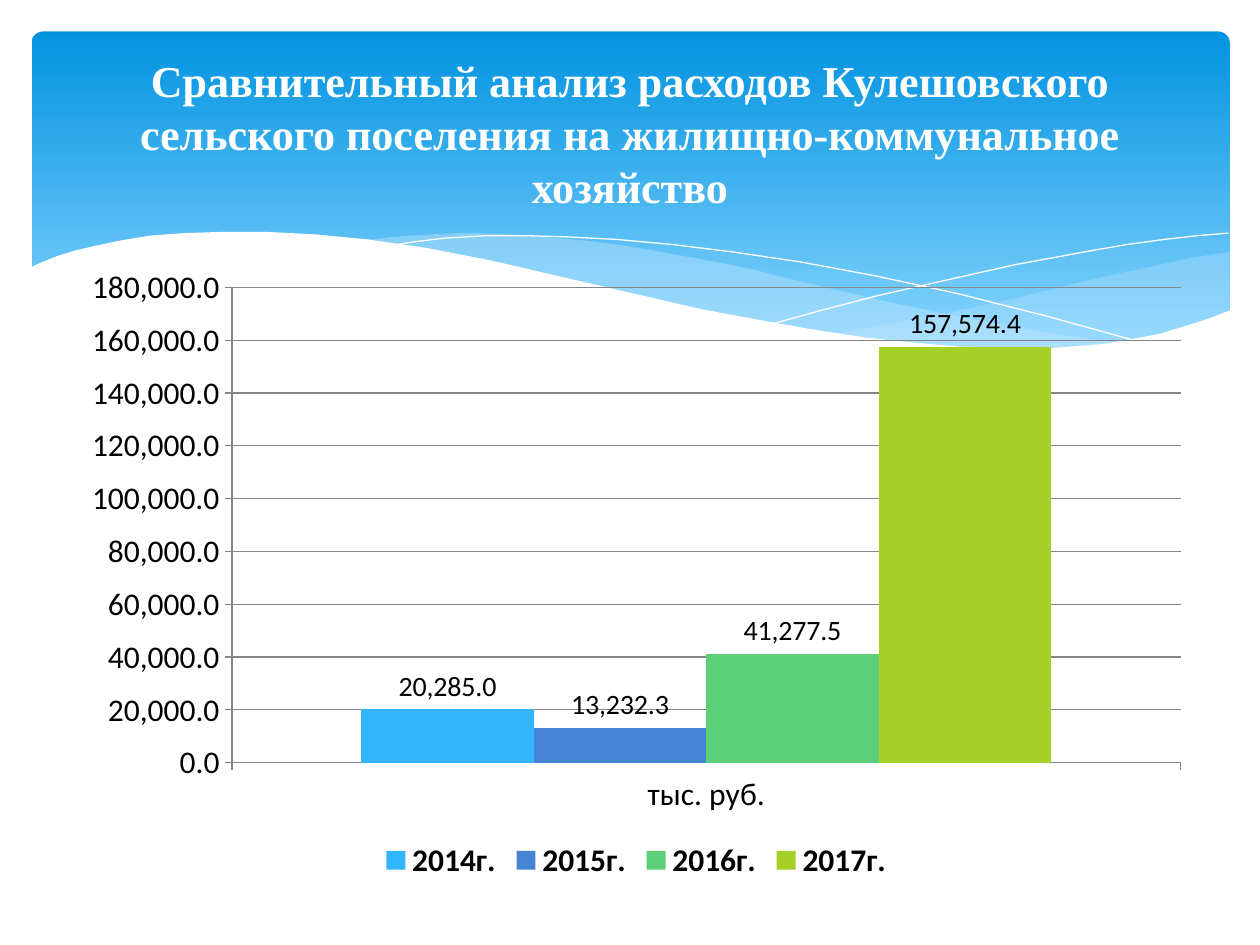
"""Build a slide with a wave banner, a title and a column chart of housing costs."""
from lxml.etree import SubElement
from pptx import Presentation
from pptx.chart.data import CategoryChartData as Data
from pptx.dml.color import RGBColor as RGB
from pptx.enum.chart import XL_CHART_TYPE as Kind, XL_LABEL_POSITION as Spot
from pptx.enum.chart import XL_LEGEND_POSITION as Side, XL_TICK_MARK as Tick
from pptx.enum.shapes import MSO_SHAPE as Form
from pptx.enum.text import MSO_ANCHOR as Anchor, PP_ALIGN as Align
from pptx.oxml.ns import qn
from pptx.util import Pt

SCALE = 9144
HUES = {"white": "FFFFFF", "black": "000000", "grid": "868686", "top": "0293E0",
        "low": "83D3FE", "mist": "C6E7FC", "sky": "31B6FD", "blue": "4584D3",
        "green": "5BD078", "lime": "A5D028"}
NUM = "#,##0.0"
TITLE = ("Сравнительный анализ расходов Кулешовского сельского поселения "
         "на жилищно-коммунальное хозяйство")
COSTS = [("2014г.", 20285, "sky"), ("2015г.", 13232.3, "blue"),
         ("2016г.", 41277.5, "green"), ("2017г.", 157574.4, "lime")]

RIGHT = [(976, 200), (948, 204), (921, 210), (861, 223), (805, 237), (753, 248),
         (706, 257), (661, 265), (691, 269), (719, 272), (745, 275), (781, 277),
         (814, 278), (844, 277), (872, 274), (897, 270), (921, 265), (942, 259),
         (963, 252), (976, 247)]
MIDDLE = [(893, 273), (837, 265), (775, 254), (706, 240), (629, 222), (598, 214),
          (569, 208), (541, 203), (514, 198), (489, 194), (465, 191), (442, 189),
          (420, 187), (399, 186), (380, 185), (361, 185), (344, 186), (328, 187),
          (313, 188), (286, 191), (323, 196), (362, 203), (404, 211), (449, 222),
          (491, 232), (530, 240), (584, 252), (634, 261), (680, 268), (722, 274),
          (761, 277), (796, 278), (828, 278), (857, 277), (876, 275)]
FALL = [(309, 195), (328, 192), (353, 189), (387, 187), (416, 187), (450, 188),
        (489, 190), (533, 194), (582, 200), (636, 208), (695, 219), (760, 233),
        (831, 251), (907, 272)]
RISE = [(613, 257), (653, 246), (695, 235), (748, 223), (806, 210), (866, 199),
        (895, 194), (924, 190), (951, 187), (975, 185)]
FRONT = [(977, 246), (959, 253), (940, 259), (920, 265), (899, 269), (875, 273),
         (850, 275), (823, 277), (793, 276), (761, 275), (726, 272), (688, 268),
         (648, 262), (603, 254), (555, 245), (503, 233), (447, 220), (391, 207),
         (340, 197), (292, 190), (250, 186), (211, 184), (177, 184), (146, 185),
         (119, 187), (95, 191), (76, 195), (59, 199), (46, 203), (36, 207),
         (29, 210), (23, 213), (23, 329), (977, 329)]


def px(num):
    return num * SCALE


def hue(name):
    return RGB.from_string(HUES[name])


def put(item, vals):
    for key, val in vals.items():
        setattr(item, key, val)


class Deck:
    """Hold the style and the current slide."""

    def __init__(self, wide, high):
        self.prs = Presentation()
        put(self.prs, {"slide_width": px(wide), "slide_height": px(high)})
        self.slide = self.prs.slides.add_slide(self.prs.slide_layouts[5])
        self.shapes = self.slide.shapes

    def font(self, font, size, color, **vals):
        put(font, {"size": Pt(size), **vals})
        font.color.rgb = hue(color)

    def panel(self, box, top, low):
        shape = self.shapes.add_shape(Form.ROUNDED_RECTANGLE, *map(px, box))
        shape.adjustments[0] = 0.034
        shape.shadow.inherit = False
        shape.line.fill.background()
        shape.fill.gradient()
        shape.fill.gradient_angle = 270
        for stop, color, pos in zip(shape.fill.gradient_stops, (top, low), (0, 0.9)):
            stop.color.rgb = hue(color)
            stop.position = pos

    def trace(self, dots, close):
        pen = self.shapes.build_freeform(*dots[0], scale=SCALE)
        pen.add_line_segments(dots[1:], close=close)
        shape = pen.convert_to_shape()
        shape.shadow.inherit = False
        return shape

    def wave(self, dots, color, alpha=100):
        shape = self.trace(dots, True)
        shape.line.fill.background()
        shape.fill.solid()
        shape.fill.fore_color.rgb = hue(color)
        if alpha < 100:
            tone = next(shape.element.iter(qn("a:srgbClr")))
            SubElement(tone, qn("a:alpha")).set("val", str(alpha * 1000))

    def curve(self, dots, color):
        shape = self.trace(dots, False)
        shape.fill.background()
        shape.line.color.rgb = hue(color)
        shape.line.width = 0

    def title(self, box, text, size, face):
        shape = self.shapes.title
        put(shape, dict(zip(("left", "top", "width", "height"), map(px, box))))
        frame = shape.text_frame
        put(frame, {"text": text, "word_wrap": True, "vertical_anchor": Anchor.MIDDLE})
        para = frame.paragraphs[0]
        para.alignment = Align.CENTER
        self.font(para.runs[0].font, size, "white", name=face, bold=True)
        shape.element.getparent().append(shape.element)

    def columns(self, box, cat, rows):
        data = Data(number_format=NUM)
        data.categories = [cat]
        for name, val, _ in rows:
            data.add_series(name, [val])
        chart = self.shapes.add_chart(Kind.COLUMN_CLUSTERED, *map(px, box), data).chart
        put(chart, {"has_title": False, "has_legend": True})
        self.font(chart.font, 18, "black", name="Calibri")
        put(chart.legend, {"position": Side.BOTTOM, "include_in_layout": False})
        self.font(chart.legend.font, 18, "black", name="Calibri", bold=True)
        plot = chart.plots[0]
        put(plot, {"gap_width": 150, "overlap": 0, "vary_by_categories": False})
        for axis in (chart.category_axis, chart.value_axis):
            put(axis, {"major_tick_mark": Tick.OUTSIDE, "minor_tick_mark": Tick.NONE})
            axis.format.line.color.rgb = hue("grid")
        axis = chart.value_axis
        axis.major_gridlines.format.line.color.rgb = hue("grid")
        put(axis.tick_labels, {"number_format": NUM, "number_format_is_linked": False})
        for bar, (_, _, color) in zip(plot.series, rows):
            bar.invert_if_negative = False
            bar.format.fill.solid()
            bar.format.fill.fore_color.rgb = hue(color)
            tags = bar.data_labels
            put(tags, {"show_value": True, "number_format": NUM,
                       "number_format_is_linked": False, "position": Spot.OUTSIDE_END})
            self.font(tags.font, 16, "black", name="Calibri")


def main():
    deck = Deck(1000, 750)
    deck.panel((25, 25, 951, 270), "top", "low")
    deck.wave(RIGHT, "mist", 29)
    deck.wave(MIDDLE, "mist", 40)
    for dots in (FALL, RISE):
        deck.curve(dots, "white")
    deck.wave(FRONT, "white")
    deck.columns((55, 203, 900, 500), "тыс. руб.", COSTS)
    deck.title((50, 37, 900, 137), TITLE, 25.2, "Times New Roman")
    deck.prs.save("out.pptx")


if __name__ == "__main__":
    main()
